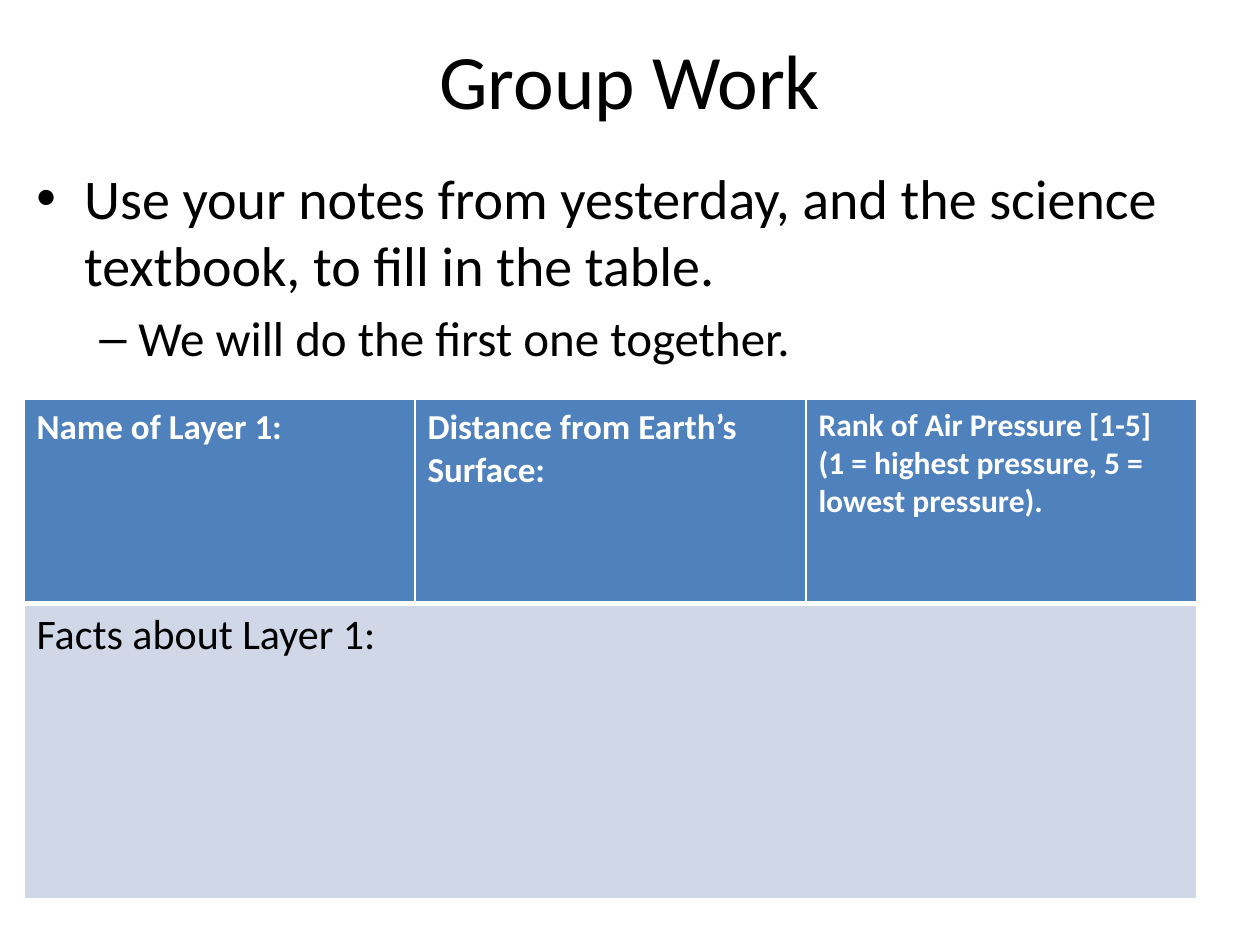
from dataclasses import dataclass

from pptx import Presentation
from pptx.dml import color
from pptx.enum import text
from pptx.oxml import parse_xml
from pptx.oxml import ns
from pptx.util import Emu, Inches, Pt

WIDE, HIGH = Inches(10), Inches(7.5)
FONT = "Calibri"
BLACK, WHITE, BLUE, PALE = "000000", "FFFFFF", "4F81BD", "D0D8E8"


@dataclass
class Box:
    x: float
    y: float
    w: float
    h: float

    def place(self) -> list[Emu]:
        return [Emu(round(share * side)) for share, side in
                ((self.x, WIDE), (self.y, HIGH), (self.w, WIDE), (self.h, HIGH))]


@dataclass
class Point:
    words: str
    size: int
    level: int
    mark: str
    left: float
    hang: float


@dataclass
class Entry:
    row: int
    col: int
    words: str
    size: int
    ink: str
    fill: str
    bold: bool
    base: int


POINTS = [
    Point("Use your notes from yesterday, and the science textbook, to fill in the table.",
          32, 0, "•", 0.38, 0.38),
    Point("We will do the first one together.", 28, 1, "–", 0.81, 0.31),
]
HEADS = [
    ("Name of Layer 1:", 20),
    ("Distance from Earth’s Surface:", 20),
    ("Rank of Air Pressure [1-5]\n(1 = highest pressure, 5 = lowest pressure).", 18),
]
ENTRIES = [Entry(0, col, words, size, WHITE, BLUE, True, 3)
           for col, (words, size) in enumerate(HEADS)]
ENTRIES.append(Entry(1, 0, "Facts about Layer 1:", 24, BLACK, PALE, False, 1))
ROWS = (1.62, 2.34)


def tint(code: str) -> color.RGBColor:
    return color.RGBColor.from_string(code)


def style(para, size: int, ink: str, bold: bool = False) -> None:
    for run in para.runs:
        font = run.font
        font.name, font.size, font.bold = FONT, Pt(size), bold
        font.color.rgb = tint(ink)


def add_box(slide, box: Box):
    frame = slide.shapes.add_textbox(*box.place()).text_frame
    frame.word_wrap = True
    return frame


def add_title(slide, words: str, box: Box) -> None:
    frame = add_box(slide, box)
    frame.vertical_anchor = text.MSO_ANCHOR.MIDDLE
    frame.text = words
    para = frame.paragraphs[0]
    para.alignment = text.PP_ALIGN.CENTER
    style(para, 44, BLACK)


def add_points(slide, points: list[Point], box: Box) -> None:
    frame = add_box(slide, box)
    frame.text = "\n".join(point.words for point in points)
    for para, point in zip(frame.paragraphs, points):
        para.level = point.level
        para.space_before = Pt(point.size * 0.2)
        style(para, point.size, BLACK)
        props = para._p.get_or_add_pPr()
        props.set("marL", str(Inches(point.left)))
        props.set("indent", str(-Inches(point.hang)))
        props.append(parse_xml(f'<a:buFont {ns.nsdecls("a")} typeface="Arial"/>'))
        props.append(parse_xml(f'<a:buChar {ns.nsdecls("a")} char="{point.mark}"/>'))


def add_edges(cell, base: int) -> None:
    props = cell._tc.get_or_add_tcPr()
    for spot, (side, width) in enumerate(zip("LRTB", (1, 1, 1, base))):
        props.insert(spot, parse_xml(
            f'<a:ln{side} {ns.nsdecls("a")} w="{Pt(width)}"><a:solidFill>'
            f'<a:srgbClr val="{WHITE}"/></a:solidFill></a:ln{side}>'))


def add_grid(slide, entries: list[Entry], box: Box) -> None:
    grid = slide.shapes.add_table(len(ROWS), len(HEADS), *box.place()).table
    for row, height in zip(grid.rows, ROWS):
        row.height = Inches(height)
    grid.cell(1, 0).merge(grid.cell(1, len(HEADS) - 1))
    for entry in entries:
        cell = grid.cell(entry.row, entry.col)
        cell.text = entry.words
        cell.fill.solid()
        cell.fill.fore_color.rgb = tint(entry.fill)
        add_edges(cell, entry.base)
        for para in cell.text_frame.paragraphs:
            style(para, entry.size, entry.ink, entry.bold)


def main() -> None:
    deck = Presentation()
    deck.slide_width, deck.slide_height = WIDE, HIGH
    slide = deck.slides.add_slide(deck.slide_layouts[6])
    add_title(slide, "Group Work", Box(0.05, 0, 0.9, 1 / 6))
    add_points(slide, POINTS, Box(0.019, 1 / 6, 0.958, 0.66))
    add_grid(slide, ENTRIES, Box(0.019, 0.423, 0.931, sum(ROWS) / 7.5))
    deck.save("out.pptx")


if __name__ == "__main__":
    main()
